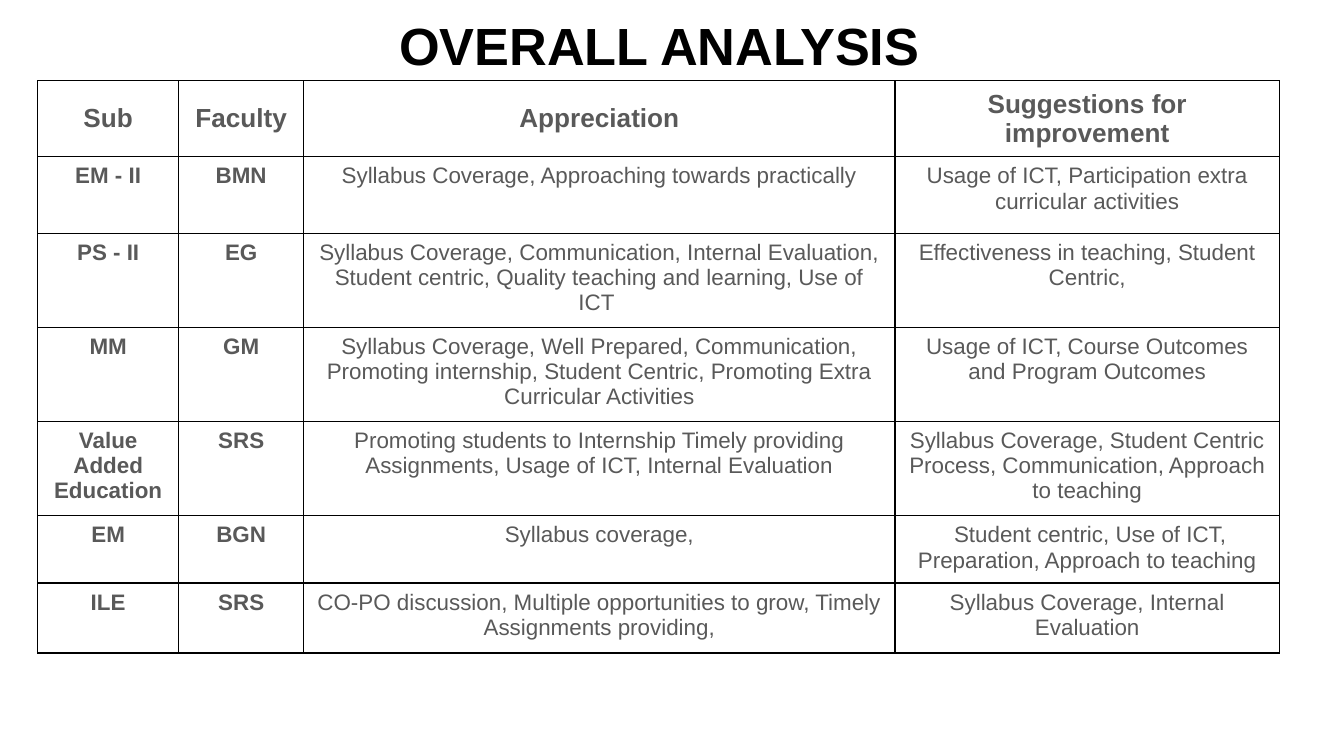
from lxml import etree
from pptx import Presentation
from pptx.dml.color import RGBColor
from pptx.enum import text
from pptx.oxml.ns import qn
from pptx.util import Inches, Pt

BLACK = RGBColor(0x00, 0x00, 0x00)
GREY = RGBColor(0x59, 0x59, 0x59)
FONT = "Arial"

COL_WIDTHS = [1.05, 0.93, 4.4, 2.86]
ROW_HEIGHTS = [0.51, 0.57, 0.62, 0.62, 0.65, 0.44, 0.52]
ROWS = [
    ("Sub", "Faculty", "Appreciation", "Suggestions for improvement"),
    ("EM - II", "BMN", "Syllabus Coverage, Approaching towards practically",
     "Usage of ICT, Participation extra curricular activities"),
    ("PS - II", "EG",
     "Syllabus Coverage, Communication, Internal Evaluation, Student centric, "
     "Quality teaching and learning, Use of ICT ",
     "Effectiveness in teaching, Student Centric,"),
    ("MM", "GM",
     "Syllabus Coverage, Well Prepared, Communication, Promoting internship, "
     "Student Centric, Promoting Extra Curricular Activities",
     "Usage of ICT, Course Outcomes and Program Outcomes"),
    ("Value Added Education", "SRS",
     "Promoting students to Internship Timely providing Assignments, "
     "Usage of ICT, Internal Evaluation",
     "Syllabus Coverage, Student Centric Process, Communication, Approach to teaching"),
    ("EM", "BGN", "Syllabus coverage,",
     " Student centric, Use of ICT, Preparation, Approach to teaching"),
    ("ILE", "SRS",
     "CO-PO discussion, Multiple opportunities to grow, Timely Assignments providing,",
     "Syllabus Coverage, Internal Evaluation"),
]


def write_centred(tf, words, size, color, bold):
    p = tf.paragraphs[0]
    p.alignment = text.PP_ALIGN.CENTER
    p.space_before = p.space_after = Pt(0)
    r = p.add_run()
    r.text = words
    r.font.name = FONT
    r.font.size = Pt(size)
    r.font.bold = bold
    r.font.color.rgb = color


def add_title(slide, words):
    tf = slide.shapes.add_textbox(Inches(0.27), Inches(0), Inches(9.27), Inches(0.55)).text_frame
    tf.word_wrap = True
    tf.margin_left = tf.margin_right = tf.margin_top = tf.margin_bottom = Inches(0.1)
    write_centred(tf, words, 28, BLACK, True)


def set_borders(cell):
    """Draw all four sides; the lines must precede the fill in tcPr."""
    tc_pr = cell._tc.get_or_add_tcPr()
    for i, side in enumerate(("a:lnL", "a:lnR", "a:lnT", "a:lnB")):
        ln = etree.Element(qn(side), w=str(Pt(0.75)))
        fill = etree.SubElement(ln, qn("a:solidFill"))
        etree.SubElement(fill, qn("a:srgbClr"), val=str(BLACK))
        tc_pr.insert(i, ln)


def fill_cell(cell, words, header, bold):
    cell.fill.background()
    cell.margin_left = cell.margin_right = Inches(0.1)
    cell.margin_top = cell.margin_bottom = Inches(0.05)
    cell.vertical_anchor = text.MSO_ANCHOR.MIDDLE if header else text.MSO_ANCHOR.TOP
    write_centred(cell.text_frame, words, 14 if header else 12, GREY, bold)
    set_borders(cell)


def add_feedback_table(slide):
    table = slide.shapes.add_table(
        len(ROWS), len(COL_WIDTHS), Inches(0.28), Inches(0.6),
        Inches(sum(COL_WIDTHS)), Inches(sum(ROW_HEIGHTS))).table
    table.first_row = table.horz_banding = False
    for column, width in zip(table.columns, COL_WIDTHS):
        column.width = Inches(width)
    for row, height in zip(table.rows, ROW_HEIGHTS):
        row.height = Inches(height)
    for i, row in enumerate(ROWS):
        for j, words in enumerate(row):
            fill_cell(table.cell(i, j), words, header=i == 0, bold=i == 0 or j < 2)


def main():
    prs = Presentation()
    prs.slide_width = Inches(10)
    prs.slide_height = Inches(10 * 9 / 16)
    slide = prs.slides.add_slide(prs.slide_layouts[6])
    add_title(slide, "OVERALL ANALYSIS")
    add_feedback_table(slide)
    prs.save("out.pptx")


if __name__ == "__main__":
    main()
